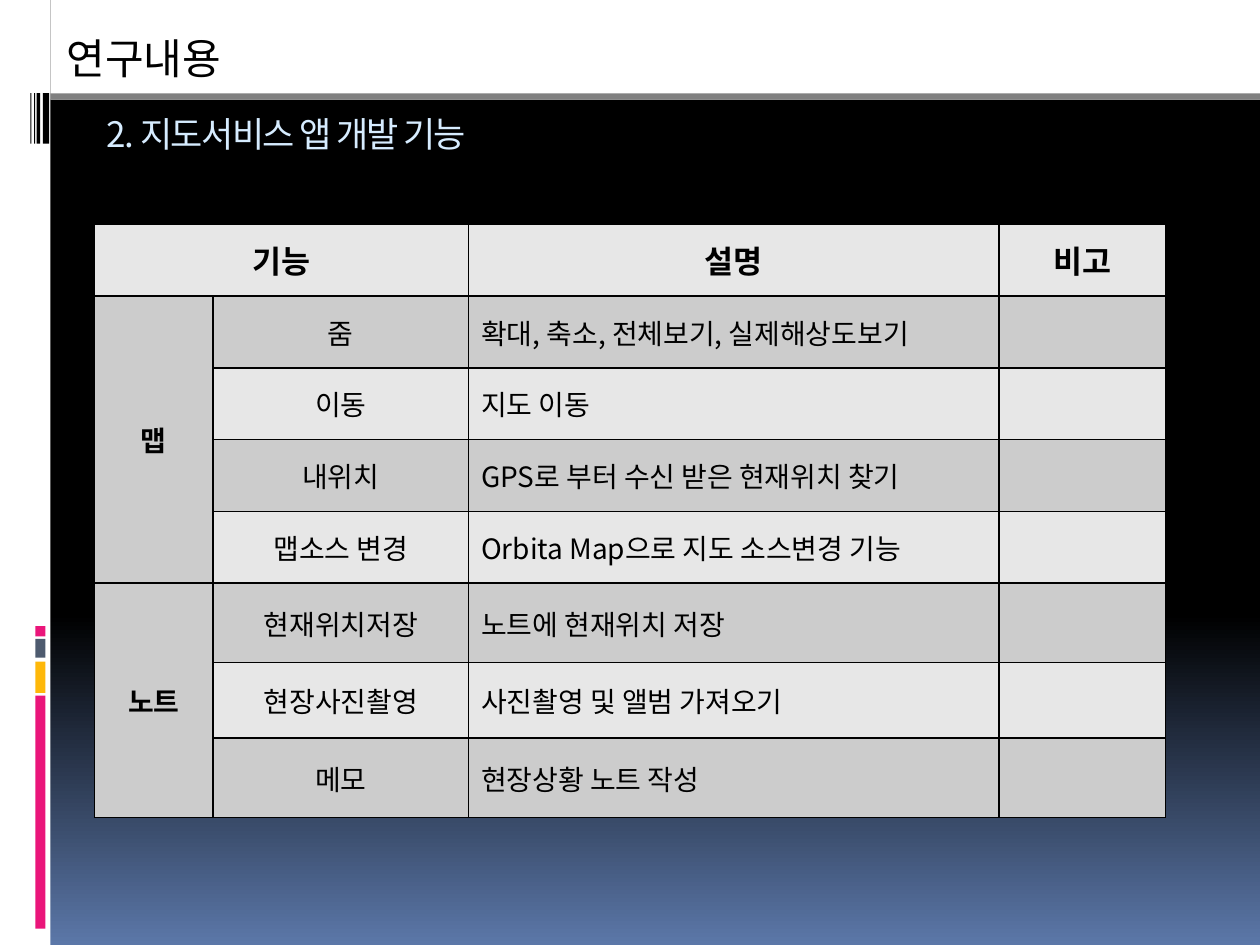
"""Build the slide listing the functions of the map service app."""
from lxml import etree
from pptx import Presentation
from pptx.dml.color import RGBColor
from pptx.enum import shapes, text
from pptx.oxml.ns import qn
from pptx.util import Inches, Pt

FONT = "Noto Sans CJK KR"
HEX = {"black": "000000", "white": "FFFFFF", "blue": "5B77A8", "pink": "EA157A",
       "gold": "FEB80A", "slate": "4E5B6F", "gray": "808080", "sky": "D6ECFF",
       "light": "E7E7E7", "dark": "CCCCCC"}
BARS = [
    (0, 0, 0.4, 7.5, "white"),
    (0.28, 5.52, 0.08, 1.85, "pink"),
    (0.28, 5.25, 0.08, 0.25, "gold"),
    (0.28, 5.07, 0.08, 0.15, "slate"),
    (0.28, 4.97, 0.08, 0.08, "pink"),
    (0.34, 0.74, 0.05, 0.4, "black"),
    (0.29, 0.74, 0.03, 0.4, "black"),
    (0.27, 0.74, 0.01, 0.4, "black"),
    (0.24, 0.74, 0.01, 0.4, "black"),
    (0.4, 0, 9.6, 0.79, "white"),
    (0.4, 0.74, 9.6, 0.05, "gray"),
]
ROWS = [
    ("기능", "", "설명", "비고"),
    ("맵", "줌", "확대, 축소, 전체보기, 실제해상도보기", ""),
    ("", "이동", "지도 이동", ""),
    ("", "내위치", "GPS로 부터 수신 받은 현재위치 찾기", ""),
    ("", "맵소스 변경", "Orbita Map으로 지도 소스변경 기능", ""),
    ("노트", "현재위치저장", "노트에 현재위치 저장", ""),
    ("", "현장사진촬영", "사진촬영 및 앨범 가져오기", ""),
    ("", "메모", "현장상황 노트 작성", ""),
]
WIDE = [0.94, 2.03, 4.21, 1.32]
HIGH = [0.57] * 5 + [0.63, 0.6, 0.63]
SPANS = [((0, 0), (0, 1)), ((1, 0), (4, 0)), ((5, 0), (7, 0))]


def tint(name):
    return RGBColor.from_string(HEX[name])


def paint(fill, name):
    fill.solid()
    fill.fore_color.rgb = tint(name)


def style(para, size, color="black", bold=False):
    for run in para.runs:
        font = run.font
        font.size, font.bold, font.name = Pt(size), bold, FONT
        font.color.rgb = tint(color)
        etree.SubElement(font._element, qn("a:ea"), typeface=FONT)


def label(slide, box, words, size, color):
    frame = slide.shapes.add_textbox(*map(Inches, box)).text_frame
    frame.word_wrap = True
    frame.text = words
    style(frame.paragraphs[0], size, color)
    return frame.paragraphs[0].runs[0]


def edge(cell):
    props = cell._tc.get_or_add_tcPr()
    for spot, side in enumerate(("a:lnL", "a:lnR", "a:lnT", "a:lnB")):
        line = etree.Element(qn(side), w=str(Pt(1)))
        fill = etree.SubElement(line, qn("a:solidFill"))
        etree.SubElement(fill, qn("a:srgbClr"), val=HEX["black"])
        props.insert(spot, line)


def grid(slide):
    box = map(Inches, (0.75, 1.78, sum(WIDE), sum(HIGH)))
    table = slide.shapes.add_table(len(ROWS), len(WIDE), *box).table
    for col, width in zip(table.columns, WIDE):
        col.width = Inches(width)
    for row, height in zip(table.rows, HIGH):
        row.height = Inches(height)
    for r, row in enumerate(ROWS):
        for c, words in enumerate(row):
            cell = table.cell(r, c)
            cell.text = words
            cell.vertical_anchor = text.MSO_ANCHOR.MIDDLE
            para = cell.text_frame.paragraphs[0]
            left = r > 0 and c == 2
            para.alignment = text.PP_ALIGN.LEFT if left else text.PP_ALIGN.CENTER
            style(para, 16 if r else 18, bold=r == 0 or c == 0)
            paint(cell.fill, "dark" if r % 2 or (r and c == 0) else "light")
            edge(cell)
    for start, end in SPANS:
        table.cell(*start).merge(table.cell(*end))


def main():
    deck = Presentation()
    deck.slide_width, deck.slide_height = Inches(10), Inches(7.5)
    slide = deck.slides.add_slide(deck.slide_layouts[6])
    back = slide.background.fill
    back.gradient()
    back.gradient_angle = 270
    for stop, spot, name in zip(back.gradient_stops, (0.65, 1), ("black", "blue")):
        stop.position, stop.color.rgb = spot, tint(name)
    for *box, name in BARS:
        bar = slide.shapes.add_shape(shapes.MSO_SHAPE.RECTANGLE, *map(Inches, box))
        bar.shadow.inherit = False
        paint(bar.fill, name)
        bar.line.fill.background()
    head = label(slide, (0.75, 0.84, 8.43, 0.55), "2. 지도서비스 앱 개발 기능", 20, "sky")
    head.font._element.set("spc", "-100")
    grid(slide)
    label(slide, (0.43, 0.21, 1.89, 0.5), "연구내용", 24, "black")
    deck.save("out.pptx")


if __name__ == "__main__":
    main()
